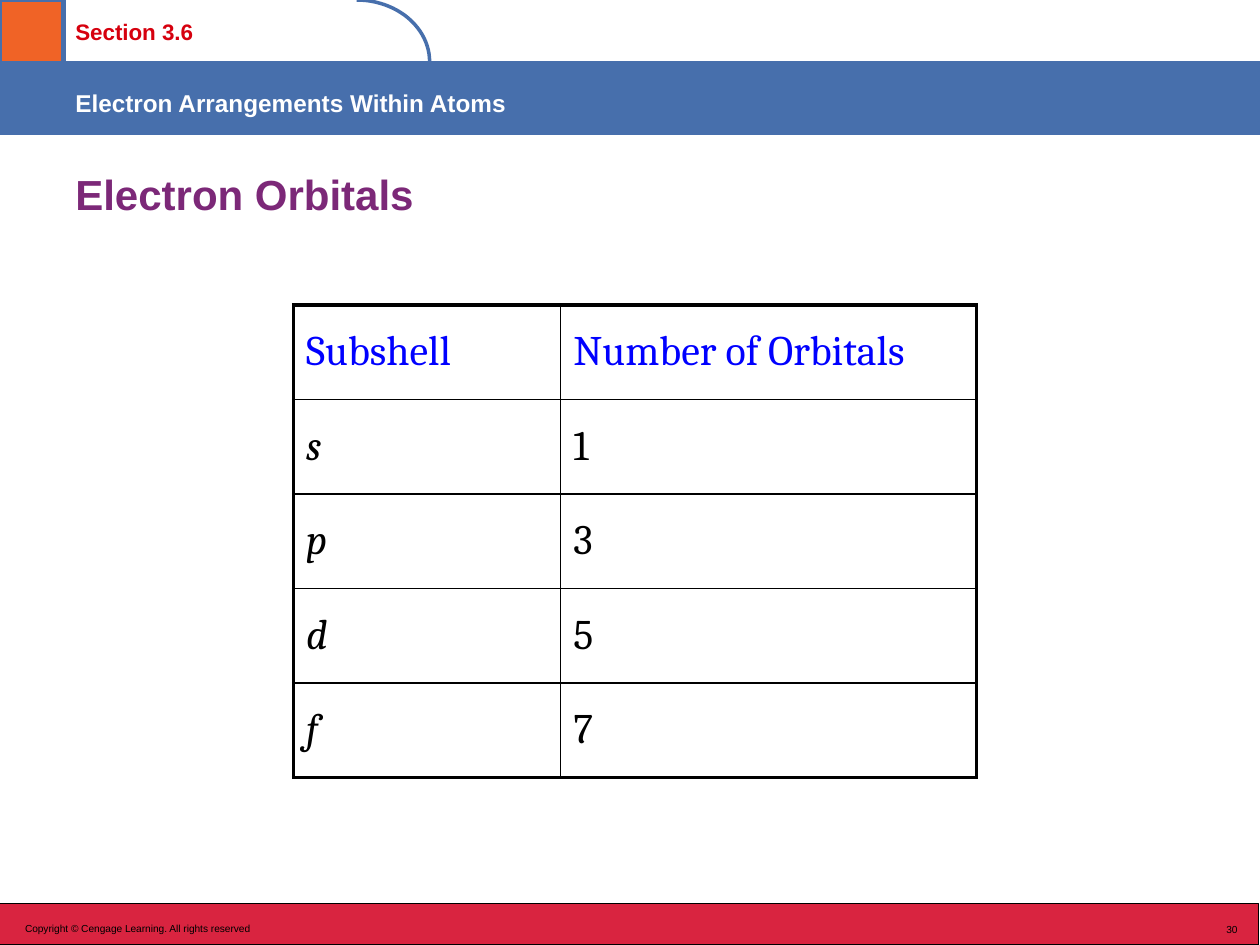
from math import cos, pi, sin

from lxml.etree import SubElement
from pptx import Presentation
from pptx.dml.color import RGBColor
from pptx.enum.shapes import MSO_SHAPE as Shape
from pptx.enum.text import MSO_ANCHOR as Anchor, PP_ALIGN as Align
from pptx.oxml.ns import qn
from pptx.util import Inches, Pt

BLUE = "476FAC"
BLACK = "000000"
ROWS = [("Subshell", "Number of Orbitals"), ("s", "1"), ("p", "3"), ("d", "5"), ("f", "7")]
COLUMN_WIDTHS = [2.12, 3.3]
ROW_HEIGHT = 0.75


def color(value):
    return RGBColor.from_string(value)


def set_line(shape, value, width):
    shape.line.color.rgb = color(value)
    shape.line.width = Pt(width)
    shape.shadow.inherit = False


def add_rectangle(slide, box, fill, line, width):
    shape = slide.shapes.add_shape(Shape.RECTANGLE, *map(Inches, box))
    shape.fill.solid()
    shape.fill.fore_color.rgb = color(fill)
    set_line(shape, line, width)


def add_tab_curve(slide, left, width, height, steps=24):
    angles = [pi / 2 * step / steps for step in range(steps + 1)]
    points = [
        (Inches(left + width * sin(angle)), Inches(height * (1 - cos(angle))))
        for angle in angles
    ]
    builder = slide.shapes.build_freeform(*points[0])
    builder.add_line_segments(points[1:], close=False)
    shape = builder.convert_to_shape()
    shape.fill.background()
    set_line(shape, BLUE, 2)


def add_run(paragraph, text, font_name, size, value, bold=False, italic=False):
    run = paragraph.add_run()
    run.text = text
    run.font.name = font_name
    run.font.size = Pt(size)
    run.font.color.rgb = color(value)
    run.font.bold = bold
    run.font.italic = italic
    return run


def add_text(slide, box, text, size, value, bold=False, raised=True,
             align=Align.LEFT, anchor=Anchor.TOP):
    frame = slide.shapes.add_textbox(*map(Inches, box)).text_frame
    frame.word_wrap = True
    frame.vertical_anchor = anchor
    paragraph = frame.paragraphs[0]
    paragraph.alignment = align
    run = add_run(paragraph, text, "Arial", size, value, bold)
    if raised:
        run.font._element.set("baseline", "20000")


def set_borders(cell, outer_sides):
    properties = cell._tc.get_or_add_tcPr()
    for position, side in enumerate("LRTB"):
        width = Pt(2.25 if side in outer_sides else 1)
        line = properties.makeelement(qn(f"a:ln{side}"), {"w": str(width)})
        fill = SubElement(line, qn("a:solidFill"))
        SubElement(fill, qn("a:srgbClr"), val=BLACK)
        properties.insert(position, line)


def add_orbital_table(slide, left, top):
    size = (sum(COLUMN_WIDTHS), ROW_HEIGHT * len(ROWS))
    frame = slide.shapes.add_table(
        len(ROWS), len(COLUMN_WIDTHS), *map(Inches, (left, top, *size)))
    table = frame.table
    table.first_row = False
    table.horz_banding = False
    for column, width in zip(table.columns, COLUMN_WIDTHS):
        column.width = Inches(width)
    for row_index, texts in enumerate(ROWS):
        table.rows[row_index].height = Inches(ROW_HEIGHT)
        is_header = row_index == 0
        for column_index, text in enumerate(texts):
            cell = table.cell(row_index, column_index)
            cell.fill.background()
            cell.vertical_anchor = Anchor.MIDDLE
            add_run(cell.text_frame.paragraphs[0], text, "Cambria", 24,
                    "0000FF" if is_header else BLACK,
                    italic=column_index == 0 and not is_header)
            sides = "L" if column_index == 0 else "R"
            if is_header:
                sides += "T"
            elif row_index == len(ROWS) - 1:
                sides += "B"
            set_borders(cell, sides)


def main():
    presentation = Presentation()
    presentation.slide_width = Inches(10)
    presentation.slide_height = Inches(7.5)
    slide = presentation.slides.add_slide(presentation.slide_layouts[6])

    add_rectangle(slide, (-0.01, 7.17, 10, 0.33), "D92440", BLACK, 0.75)
    add_rectangle(slide, (0, 0.49, 10, 0.58), BLUE, BLUE, 0.75)
    add_text(slide, (0.5, 0.03, 2.85, 0.47), "Section 3.6", 22, "D6000E", bold=True)
    add_text(slide, (0.5, 0.58, 9.5, 0.5), "Electron Arrangements Within Atoms",
             24, "FFFFFF", bold=True)
    add_rectangle(slide, (0.01, 0, 0.5, 0.5), "48A459", BLUE, 2)
    add_tab_curve(slide, 2.83, 0.58, 0.49)
    add_rectangle(slide, (0, 0, 0.5, 0.5), "F06326", BLUE, 2)
    add_text(slide, (0.1, 7.24, 6.42, 0.25),
             "Copyright © Cengage Learning. All rights reserved", 10, BLACK)
    add_text(slide, (7.25, 7.25, 2.67, 0.25), "30", 10, BLACK, align=Align.RIGHT)
    add_text(slide, (0.5, 1.25, 9, 0.58), "Electron Orbitals", 24, "7C2878",
             bold=True, raised=False, anchor=Anchor.MIDDLE)
    add_orbital_table(slide, 2.33, 2.42)

    presentation.save("out.pptx")


if __name__ == "__main__":
    main()
